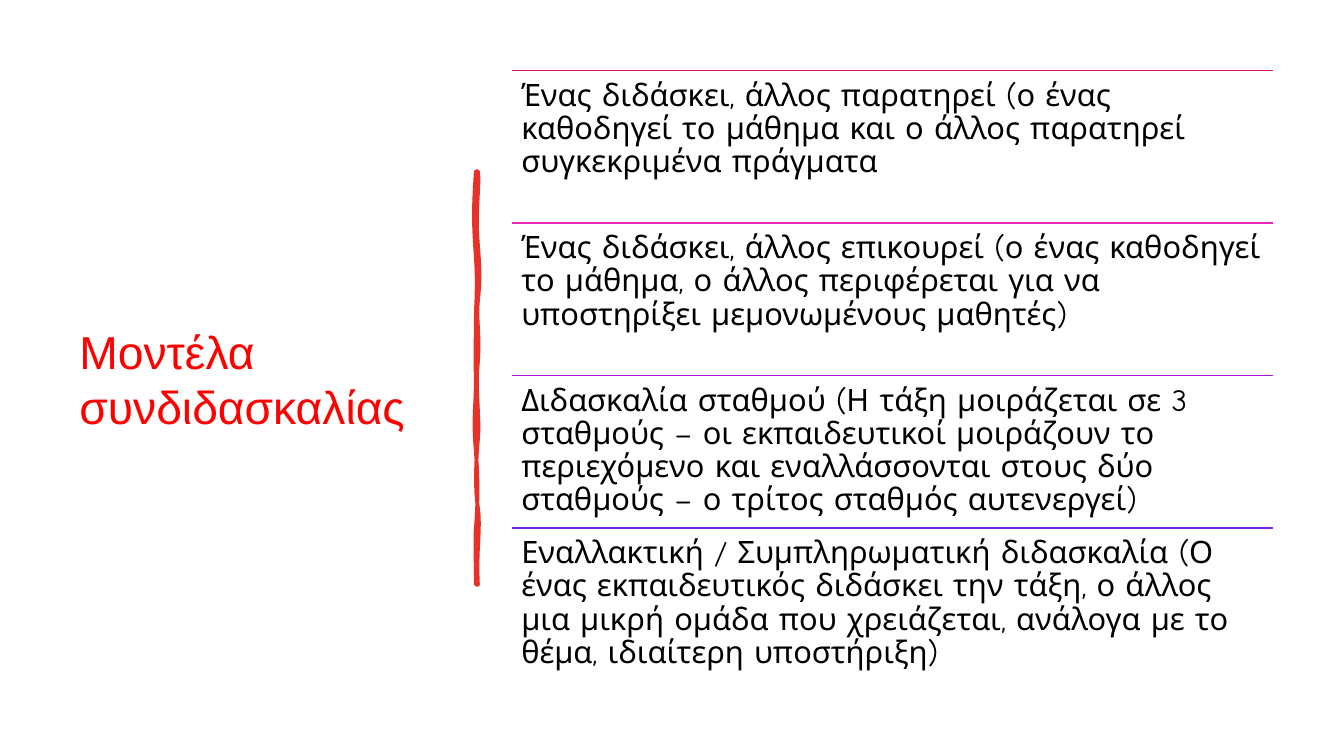
from pptx import Presentation
from pptx.dml.color import RGBColor
from pptx.enum.shapes import MSO_CONNECTOR
from pptx.enum.text import MSO_ANCHOR
from pptx.oxml.ns import qn
from pptx.util import Emu, Pt
from lxml import etree

PX = 9144  # 100 px to the inch
STRAIGHT = MSO_CONNECTOR.STRAIGHT
TOP, MIDDLE = MSO_ANCHOR.TOP, MSO_ANCHOR.MIDDLE

COLORS = {
    "title": "FF0000",
    "brush": "E73229",
    "text": "000000",
    "observe": "D5175E",
    "assist": "E729BE",
    "station": "AE17D5",
    "alternative": "7129E7",
}

MODELS = [
    ("observe", "Ένας διδάσκει, άλλος παρατηρεί (ο ένας καθοδηγεί το μάθημα και "
                "ο άλλος παρατηρεί συγκεκριμένα πράγματα"),
    ("assist", "Ένας διδάσκει, άλλος επικουρεί (ο ένας καθοδηγεί το μάθημα, ο άλλος "
               "περιφέρεται για να υποστηρίξει μεμονωμένους μαθητές)"),
    ("station", "Διδασκαλία σταθμού (Η τάξη μοιράζεται σε 3 σταθμούς – οι εκπαιδευτικοί "
                "μοιράζουν το περιεχόμενο και εναλλάσσονται στους δύο σταθμούς – ο τρίτος "
                "σταθμός αυτενεργεί)"),
    ("alternative", "Εναλλακτική / Συμπληρωματική διδασκαλία (Ο ένας εκπαιδευτικός διδάσκει "
                    "την τάξη, ο άλλος μια μικρή ομάδα που χρειάζεται, ανάλογα με το θέμα, "
                    "ιδιαίτερη υποστήριξη)"),
]
LIST_LEFT, LIST_TOP, LIST_WIDTH, LIST_HEIGHT = 508, 70, 755, 605

BRUSH_START = (472, 170)
# Two control points and an end point for each curve
BRUSH_CURVES = [
    ((473, 170), (473, 170), (474, 170)),
    ((476, 186), (471, 207), (474, 243)),
    ((477, 279), (475, 285), (474, 299)),
    ((472, 313), (476, 331), (474, 359)),
    ((471, 387), (476, 413), (474, 436)),
    ((472, 458), (471, 485), (474, 504)),
    ((477, 523), (472, 548), (474, 580)),
    ((473, 580), (473, 580), (472, 580)),
    ((472, 554), (471, 536), (472, 524)),
    ((473, 513), (475, 483), (472, 448)),
    ((469, 413), (472, 406), (472, 375)),
    ((471, 345), (472, 341), (472, 319)),
    ((472, 298), (474, 285), (472, 255)),
    ((470, 226), (469, 212), (472, 170)),
]


def px(length):
    return Emu(round(length * PX))


def color(name):
    return RGBColor.from_string(COLORS[name])


def add_text(slide, text, left, top, width, height, *, font, size, fill,
             anchor=TOP, inset=9, spacing=1.0):
    frame = slide.shapes.add_textbox(px(left), px(top), px(width), px(height)).text_frame
    frame.word_wrap = True
    frame.vertical_anchor = anchor
    frame.margin_left = frame.margin_right = px(inset)
    frame.margin_top = frame.margin_bottom = px(inset)
    paragraph = frame.paragraphs[0]
    paragraph.line_spacing = spacing
    run = paragraph.add_run()
    run.text = text
    run.font.name = font
    run.font.size = Pt(size)
    run.font.color.rgb = color(fill)


def add_rule(slide, left, top, width, line_color):
    rule = slide.shapes.add_connector(STRAIGHT, px(left), px(top), px(left + width), px(top))
    rule.line.color.rgb = color(line_color)
    rule.line.width = Pt(1)
    properties = rule._element.find(qn("p:spPr"))
    etree.SubElement(properties, qn("a:effectLst"))


def curve_points(start, curves, steps=8):
    """Return points along a chain of cubic curves, in EMU."""
    points = []
    for first, second, end in curves:
        for step in range(1, steps + 1):
            t = step / steps
            weights = ((1 - t) ** 3, 3 * t * (1 - t) ** 2, 3 * t ** 2 * (1 - t), t ** 3)
            corners = (start, first, second, end)
            points.append(tuple(
                px(sum(weight * corner[axis] for weight, corner in zip(weights, corners)))
                for axis in (0, 1)))
        start = end
    return points


def add_brush_stroke(slide, start, curves):
    builder = slide.shapes.build_freeform(px(start[0]), px(start[1]))
    builder.add_line_segments(curve_points(start, curves), close=True)
    stroke = builder.convert_to_shape()
    stroke.shadow.inherit = False
    stroke.fill.solid()
    stroke.fill.fore_color.rgb = color("brush")
    stroke.line.color.rgb = color("brush")
    stroke.line.width = Pt(2.75)


def main():
    presentation = Presentation()
    presentation.slide_width, presentation.slide_height = px(1333), px(750)
    slide = presentation.slides.add_slide(presentation.slide_layouts[6])

    add_text(slide, "Μοντέλα συνδιδασκαλίας", 69, 70, 374, 611,
             font="Arial", size=33, fill="title", anchor=MIDDLE, inset=10)
    add_brush_stroke(slide, BRUSH_START, BRUSH_CURVES)

    row_height = LIST_HEIGHT / len(MODELS)
    for index, (line_color, text) in enumerate(MODELS):
        top = LIST_TOP + index * row_height
        add_rule(slide, LIST_LEFT, top, LIST_WIDTH, line_color)
        add_text(slide, text, LIST_LEFT, top, LIST_WIDTH, row_height,
                 font="Comic Neue", size=22, fill="text", spacing=0.9)

    presentation.save("out.pptx")


if __name__ == "__main__":
    main()
